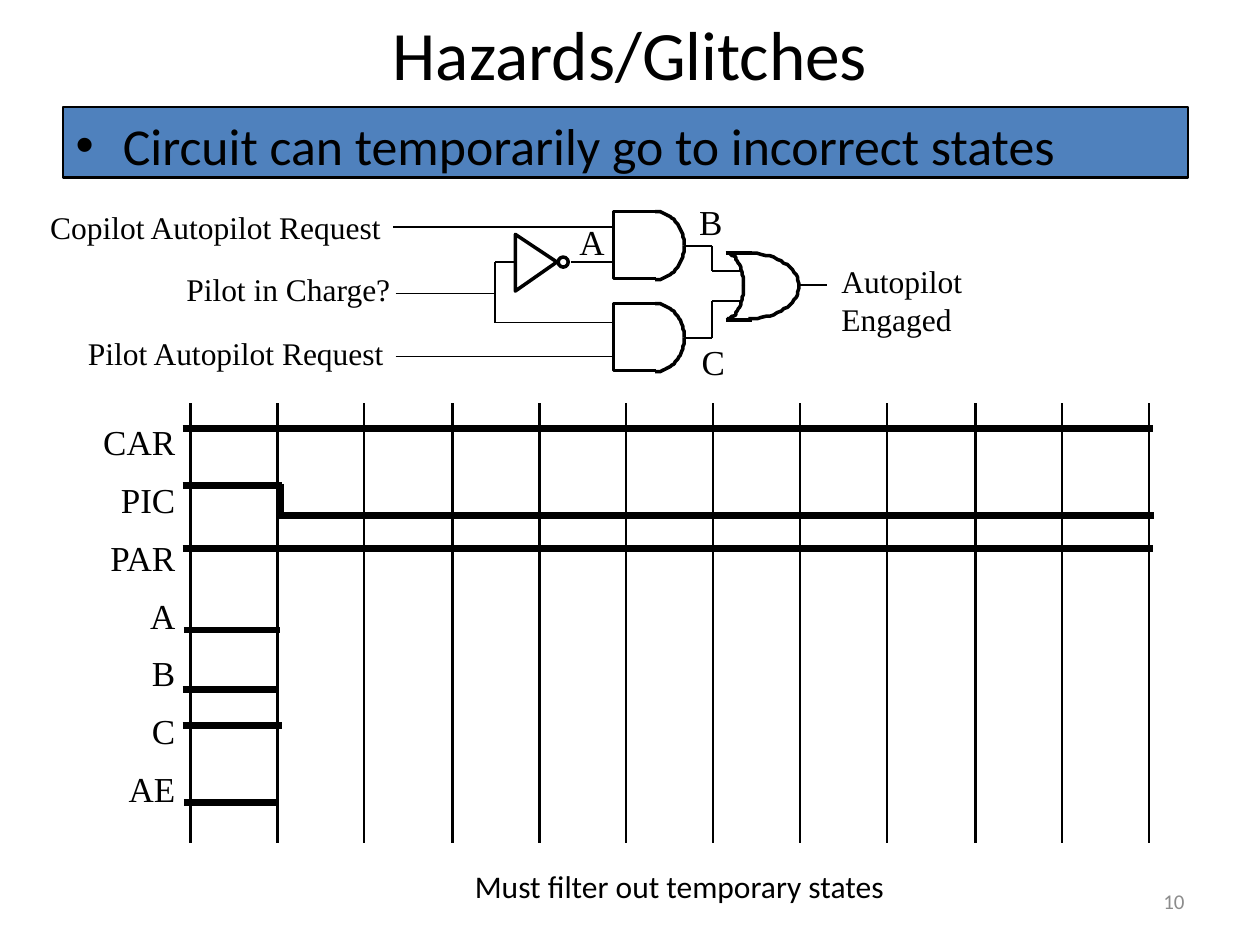
import math

from lxml import etree
from pptx import Presentation
from pptx.dml.color import RGBColor
from pptx.enum import shapes, text
from pptx.oxml.ns import qn
from pptx.util import Pt

PX = 9144
BLACK = "000000"
SERIF = "Times New Roman"
SANS = "Calibri"


def color(value):
    return RGBColor.from_string(value)


def write(tf, lines, size=18, font=SERIF, fill=BLACK, align=None, gap=None):
    for i, line in enumerate(lines.split("\n")):
        p = tf.paragraphs[0] if i == 0 else tf.add_paragraph()
        if align is not None:
            p.alignment = align
        if gap is not None:
            p.space_before = p.space_after = Pt(gap)
        r = p.add_run()
        r.text = line
        r.font.size = Pt(size)
        r.font.name = font
        r.font.color.rgb = color(fill)


class Board:
    def __init__(self, slide):
        self.s = slide
        self.thin, self.grid, self.gate, self.wave = 1, 1.5, 2, 4

    def stroke(self, sp, width):
        sp.line.color.rgb = color(BLACK)
        sp.line.width = Pt(width)

    def place(self, sp, x, y, w, h):
        sp.left, sp.top, sp.width, sp.height = (v * PX for v in (x, y, w, h))

    def holder(self, sp, box, content, anchor, **style):
        self.place(sp, *box)
        tf = sp.text_frame
        tf.auto_size = text.MSO_AUTO_SIZE.NONE
        tf.vertical_anchor = anchor
        write(tf, content, font=SANS, **style)
        return sp

    def label(self, x, y, w, h, content, wrap=False,
              anchor=text.MSO_ANCHOR.TOP, **style):
        sp = self.s.shapes.add_textbox(x * PX, y * PX, w * PX, h * PX)
        tf = sp.text_frame
        tf.word_wrap = wrap
        tf.vertical_anchor = anchor
        write(tf, content, **style)

    def line(self, x1, y1, x2, y2, width):
        sp = self.s.shapes.add_connector(
            shapes.MSO_CONNECTOR.STRAIGHT, x1 * PX, y1 * PX, x2 * PX, y2 * PX)
        self.stroke(sp, width)
        etree.SubElement(sp._element.spPr, qn("a:effectLst"))

    def outline(self, points, close=False):
        fb = self.s.shapes.build_freeform(*points[0], scale=PX)
        fb.add_line_segments(points[1:], close=close)
        self.finish(fb.convert_to_shape())

    def finish(self, sp):
        sp.fill.background()
        sp.shadow.inherit = False
        self.stroke(sp, self.gate)

    def bow(self, x, y, w, h):
        for start in (-90, 0):
            angles = [math.radians(start + 5 * i) for i in range(19)]
            self.outline([(x + w * math.cos(a), y + h * math.sin(a))
                          for a in angles])

    def and_gate(self, x, y):
        self.bow(x + 33, y + 27, 23, 27)
        self.outline([(x + 34, y), (x, y), (x, y + 53), (x + 34, y + 53)])

    def or_gate(self, x, y):
        self.bow(x, y + 26, 13, 26)
        self.bow(x + 17, y + 26, 40, 26)
        for edge in (y, y + 53):
            self.line(x - 1, edge, x + 20, edge, self.gate)

    def inverter(self, x, y):
        self.outline([(x + 33, y), (x, y - 22), (x, y + 23)], close=True)
        self.finish(self.s.shapes.add_shape(
            shapes.MSO_SHAPE.OVAL,
            (x + 34) * PX, (y - 4) * PX, 8 * PX, 8 * PX))


def main():
    prs = Presentation()
    prs.slide_width, prs.slide_height = 1000 * PX, 750 * PX
    s = prs.slides.add_slide(prs.slide_layouts[1])
    board = Board(s)

    body = board.holder(s.placeholders[1], (50, 85, 893, 56),
                        "Circuit can temporarily go to incorrect states",
                        text.MSO_ANCHOR.TOP, size=29.6)
    body.fill.solid()
    body.fill.fore_color.rgb = color("4F81BD")
    board.stroke(body, board.grid)
    board.holder(s.shapes.title, (50, 0, 900, 80), "Hazards/Glitches",
                 text.MSO_ANCHOR.BOTTOM, size=39.6, align=text.PP_ALIGN.CENTER)

    for y in (168, 241):
        board.and_gate(487, y)
    board.or_gate(577, 201)
    board.inverter(409, 208)

    wires = [
        (312, 180, 487, 180), (314, 233, 393, 233), (314, 283, 487, 283),
        (393, 208, 393, 256), (393, 208, 409, 208), (393, 256, 487, 256),
        (453, 208, 487, 208), (543, 195, 565, 195), (565, 195, 565, 215),
        (565, 215, 588, 215), (543, 268, 565, 268), (565, 239, 565, 268),
        (565, 239, 588, 239), (635, 226, 656, 226),
    ]
    for wire in wires:
        board.line(*wire, board.thin)

    signals = [
        (30, 160, 284, "Copilot Autopilot Request"),
        (138, 209, 182, "Pilot in Charge?"),
        (60, 260, 256, "Pilot Autopilot Request"),
        (658, 203, 209, "Autopilot Engaged"),
    ]
    for x, y, w, name in signals:
        board.label(x, y, w, 40, name)
    for x, y, w, name in [(450, 170, 40, "A"), (545, 154, 38, "B"),
                          (547, 265, 38, "C")]:
        board.label(x, y, w, 43, name, size=20)

    board.label(72, 329, 77, 329, "CAR\nPIC\nPAR\nA\nB\nC\nAE", wrap=True,
                size=20, align=text.PP_ALIGN.RIGHT, gap=4.5)
    for i in range(12):
        x = 151 + round(i * 761 / 11)
        board.line(x, 320, x, 669, board.grid)

    waves = [
        (145, 340, 915, 340), (145, 385, 224, 385), (223, 384, 223, 410),
        (220, 409, 916, 409), (145, 435, 915, 435), (146, 500, 222, 500),
        (145, 547, 220, 547), (145, 576, 224, 576), (146, 637, 220, 637),
    ]
    for wave in waves:
        board.line(*wave, board.wave)

    board.label(367, 683, 348, 40, "Must filter out temporary states",
                font=SANS)
    board.label(717, 695, 233, 40, "10", wrap=True,
                anchor=text.MSO_ANCHOR.MIDDLE, size=12, font=SANS,
                fill="8C8C8C", align=text.PP_ALIGN.RIGHT)
    prs.save("out.pptx")


if __name__ == "__main__":
    main()
